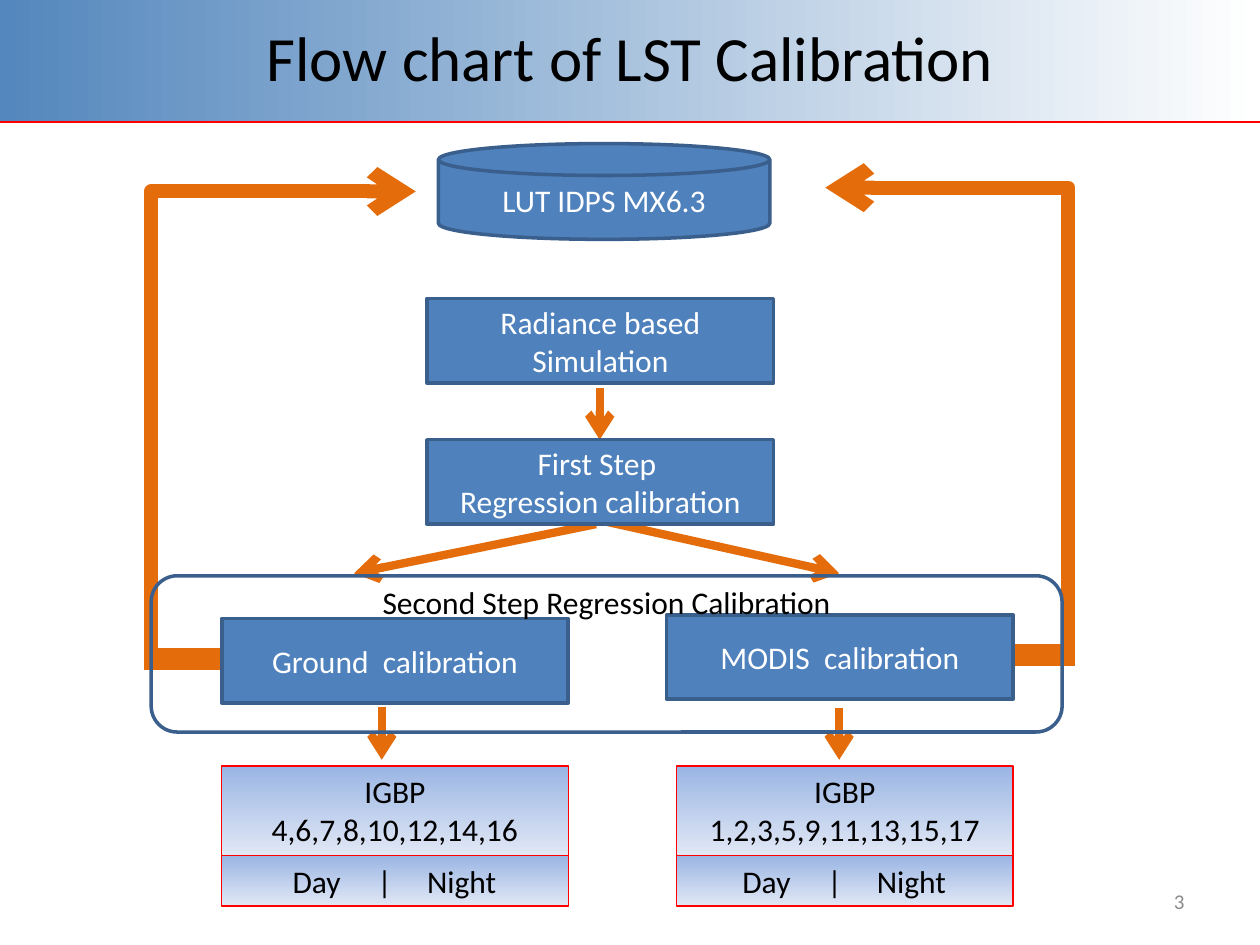
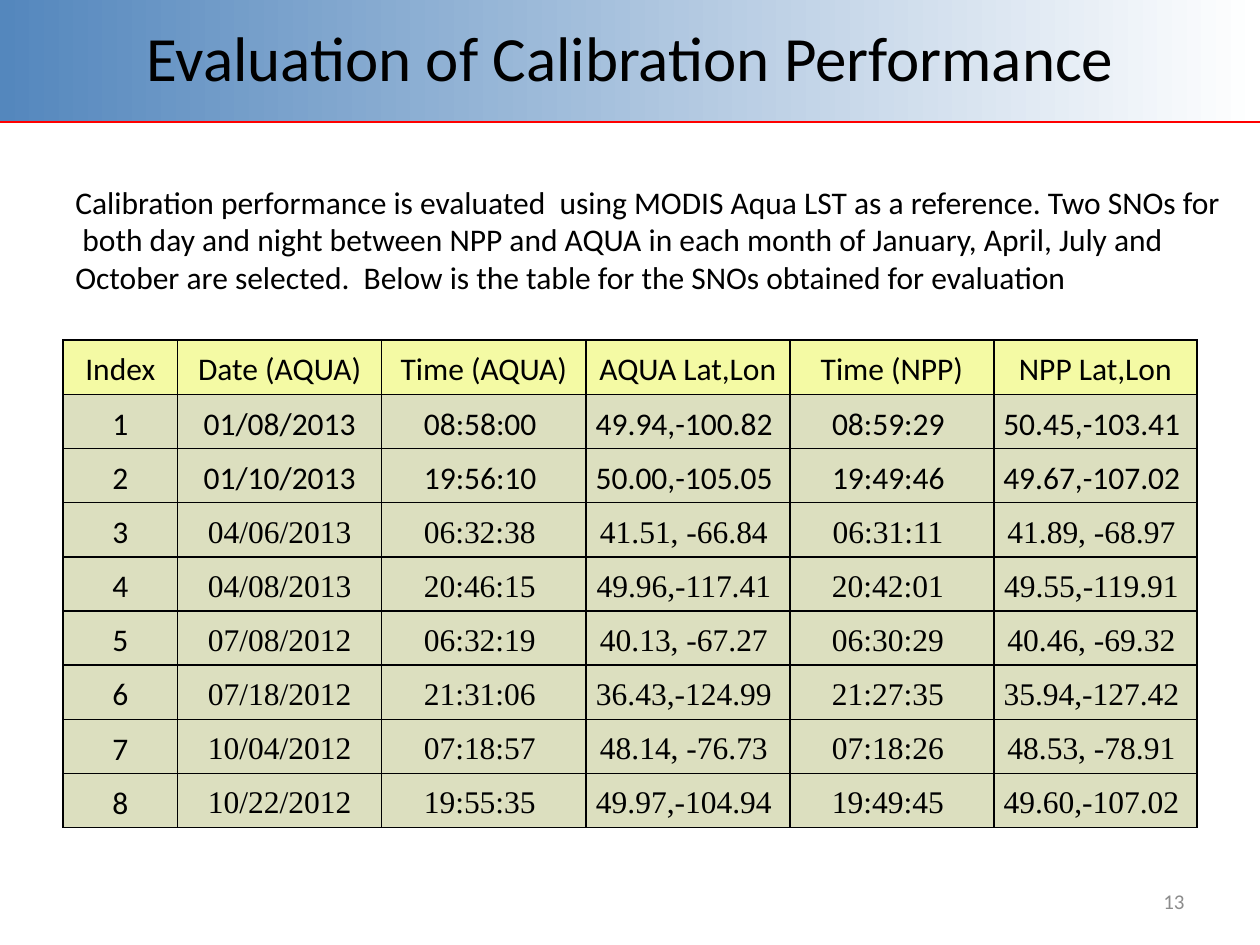
"""Build two slides: the LST calibration flow chart and its evaluation table."""
from lxml import etree
from pptx import Presentation, util as u
from pptx.dml.color import RGBColor
from pptx.enum import shapes, text
from pptx.oxml.ns import qn

HUES = {
    "band": "5487BD", "white": "FFFFFF", "red": "FF0000", "black": "000000",
    "box": "4F81BD", "edge": "3A5F8C", "flow": "E46C0A", "pale": "9AB5E4",
    "mist": "E1E8F5", "head": "F4FAA4", "cell": "DCDFBF", "grid": "000002",
    "gray": "8C8C8C",
}
SANS, SERIF = "Calibri", "Times New Roman"
KIND = shapes.MSO_SHAPE
LEFT, MID, RIGHT = text.PP_ALIGN.LEFT, text.PP_ALIGN.CENTER, text.PP_ALIGN.RIGHT
TOP, HALF = text.MSO_ANCHOR.TOP, text.MSO_ANCHOR.MIDDLE

PAGES = [("Flow chart of LST Calibration", "3"),
         ("Evaluation of Calibration Performance", "13")]

STEPS = [
    (3.39, 2.37, "Radiance based Simulation"),
    (3.39, 3.49, "First Step \nRegression calibration"),
    (1.76, 4.91, "Ground  calibration"),
    (5.29, 4.88, "MODIS  calibration"),
]
ARROWS = [
    (4.76, 3.08, 4.76, 3.49),
    (4.73, 4.16, 2.81, 4.55),
    (4.81, 4.14, 6.66, 4.55),
    (3.03, 5.61, 3.03, 6.03),
    (6.66, 5.62, 6.66, 6.03),
]
STUBS = [(1.2, 5.23, 1.76, 5.23), (8.04, 5.2, 8.42, 5.2)]
LOOPS = [
    ((1.2, 5.32, 3.3, 1.52), {"rot": "5400000", "flipH": "1", "flipV": "1"}),
    ((8.48, 5.29, 6.55, 1.49), {"rot": "16200000", "flipV": "1"}),
]
CLASSES = [(1.76, 2.75, "4,6,7,8,10,12,14,16"),
           (5.37, 2.67, "1,2,3,5,9,11,13,15,17")]
TIMES = "\tDay\t|\tNight"
TABS = (-0.62, -0.08, 0.53)

INTRO = ("Calibration performance is evaluated  using MODIS Aqua LST as a reference. "
         "Two SNOs for  both day and night between NPP and AQUA in each month of "
         "January, April, July and October are selected.  Below is the table for the "
         "SNOs obtained for evaluation")
HEADS = ["Index", "Date (AQUA)", "Time (AQUA)", "AQUA Lat,Lon", "Time (NPP)", "NPP Lat,Lon"]
SNOS = [
    ("01/08/2013", "08:58:00", "49.94,-100.82", "08:59:29", "50.45,-103.41"),
    ("01/10/2013", "19:56:10", "50.00,-105.05", "19:49:46", "49.67,-107.02"),
    ("04/06/2013", "06:32:38", "41.51, -66.84", "06:31:11", "41.89, -68.97"),
    ("04/08/2013", "20:46:15", "49.96,-117.41", "20:42:01", "49.55,-119.91"),
    ("07/08/2012", "06:32:19", "40.13, -67.27", "06:30:29", "40.46, -69.32"),
    ("07/18/2012", "21:31:06", "36.43,-124.99", "21:27:35", "35.94,-127.42"),
    ("10/04/2012", "07:18:57", "48.14, -76.73", "07:18:26", "48.53, -78.91"),
    ("10/22/2012", "19:55:35", "49.97,-104.94", "19:49:45", "49.60,-107.02"),
]
WIDTHS = [0.91, 1.62, 1.62, 1.62, 1.62, 1.61]
ROW = 0.43


def inch(*nums):
    return [u.Inches(n) for n in nums]


def hue(name):
    return RGBColor.from_string(HUES[name])


def assign(item, looks):
    for key, val in looks.items():
        setattr(item, key, val)


def write(frame, words, ink="black", size=18, face=SANS, align=MID, anchor=HALF, **para):
    assign(frame, {"text": words, "word_wrap": True, "vertical_anchor": anchor})
    for line in frame.paragraphs:
        assign(line, {"alignment": align, **para})
        assign(line.font, {"size": u.Pt(size), "name": face})
        line.font.color.rgb = hue(ink)


def blend(fill, hues, angle):
    fill.gradient()
    fill.gradient_angle = angle
    for stop, name in zip(fill.gradient_stops, hues):
        stop.color.rgb = hue(name)


def stroke(item, ink, width):
    item.line.color.rgb = hue(ink)
    item.line.width = u.Pt(width)


def draw(home, kind, at, ink=None, width=2, fill=None):
    item = home.add_shape(kind, *inch(*at))
    item.shadow.inherit = False
    if fill:
        item.fill.solid()
        item.fill.fore_color.rgb = hue(fill)
    else:
        item.fill.background()
    if ink:
        stroke(item, ink, width)
    else:
        item.line.fill.background()
    return item


def link(home, ends, width, ink="flow", tip=False):
    item = home.add_connector(shapes.MSO_CONNECTOR.STRAIGHT, *inch(*ends))
    stroke(item, ink, width)
    if tip:
        etree.SubElement(item.line._get_or_add_ln(), qn("a:tailEnd"), type="arrow")
    etree.SubElement(item.element.spPr, qn("a:effectLst"))
    return item


def loop(home, ends, turn):
    x1, y1, x2, y2 = ends
    midx, midy = (x1 + x2) / 2, (y1 + y2) / 2
    wide, high = abs(y2 - y1), abs(x2 - x1)
    box = (midx - wide / 2, midy - high / 2, midx + wide / 2, midy + high / 2)
    item = link(home, box, 8, tip=True)
    props = item.element.spPr
    props.find(qn("a:prstGeom")).set("prst", "bentConnector2")
    for key, val in turn.items():
        props.find(qn("a:xfrm")).set(key, val)


def start(deck, title, number):
    slide = deck.slides.add_slide(deck.slide_layouts[5])
    home = slide.shapes
    blend(draw(home, KIND.RECTANGLE, (0, -0.01, 10, 0.97)).fill, ("band", "white"), 0)
    link(home, (0, 0.97, 10, 0.97), 1.25, "red")
    head = home.title
    assign(head, dict(zip(("left", "top", "width", "height"), inch(0.5, 0, 9, 0.9))))
    write(head.text_frame, title, size=36)
    head.element.getparent().append(head.element)
    foot = home.add_textbox(*inch(7.17, 6.95, 2.33, 0.4))
    write(foot.text_frame, number, "gray", 12, align=RIGHT)
    return home


def classes(home, left, wide, codes):
    group = home.add_group_shape().shapes
    cards = []
    for top, high, words in ((6.08, 0.71, "IGBP\n" + codes), (6.79, 0.4, TIMES)):
        card = draw(group, KIND.RECTANGLE, (left, top, wide, high), "red", 0.75)
        blend(card.fill, ("pale", "mist"), 270)
        write(card.text_frame, words, anchor=TOP)
        cards.append(card)
    line = cards[-1].text_frame.paragraphs[0]
    line.alignment = LEFT
    stops = etree.SubElement(line._p.get_or_add_pPr(), qn("a:tabLst"))
    line._p.pPr.insert(0, stops)
    for shift in TABS:
        spot = u.Inches(wide / 2 + shift - 0.1)
        etree.SubElement(stops, qn("a:tab"), pos=str(spot), algn="ctr")


def chart(home):
    disk = draw(home, KIND.FLOWCHART_MAGNETIC_DISK, (3.48, 1.14, 2.63, 0.76), "edge", fill="box")
    write(disk.text_frame, "LUT IDPS MX6.3", "white")
    for ends, turn in LOOPS:
        loop(home, ends, turn)
    for ends in STUBS:
        link(home, ends, 12.5)
    for ends in ARROWS:
        link(home, ends, 4.75, tip=True)
    for left, top, words in STEPS:
        step = draw(home, KIND.FLOWCHART_PROCESS, (left, top, 2.75, 0.67), "edge", fill="box")
        write(step.text_frame, words, "white")
    for entry in CLASSES:
        classes(home, *entry)
    frame = draw(home, KIND.ROUNDED_RECTANGLE, (1.2, 4.57, 7.23, 1.24), "edge")
    frame.text_frame.margin_top = 0
    write(frame.text_frame, "Second Step Regression Calibration", anchor=TOP)


def border(cell):
    props = cell._tc.get_or_add_tcPr()
    for side in ("lnL", "lnR", "lnT", "lnB"):
        edge = etree.SubElement(props, qn("a:" + side), w=str(u.Pt(1)))
        solid = etree.SubElement(edge, qn("a:solidFill"))
        etree.SubElement(solid, qn("a:srgbClr"), val=HUES["grid"])


def report(home):
    intro = home.add_textbox(*inch(0.5, 1.4, 9.33, 1.01))
    write(intro.text_frame, INTRO, align=LEFT, anchor=TOP)
    rows = [HEADS] + [(str(n), sno[0], *(val + " " for val in sno[1:]))
                      for n, sno in enumerate(SNOS, 1)]
    size = inch(0.5, 2.7, sum(WIDTHS), ROW * len(rows))
    table = home.add_table(len(rows), len(HEADS), *size).table
    assign(table, {"first_row": False, "horz_banding": False})
    for col, wide in zip(table.columns, WIDTHS):
        col.width = u.Inches(wide)
    pads = dict.fromkeys(("margin_left", "margin_right", "margin_top", "margin_bottom"), 0)
    for r, row in enumerate(rows):
        for c, words in enumerate(row):
            cell = table.cell(r, c)
            assign(cell, {**pads, "vertical_anchor": HALF})
            border(cell)
            cell.fill.solid()
            cell.fill.fore_color.rgb = hue("cell" if r else "head")
            face = SERIF if r > 2 and c else SANS
            cell.text = words
            line = cell.text_frame.paragraphs[0]
            assign(line, {"alignment": MID, "line_spacing": 1.15})
            assign(line.font, {"size": u.Pt(18), "name": face})
            line.font.color.rgb = hue("black")


def main():
    deck = Presentation()
    assign(deck, {"slide_width": u.Inches(10), "slide_height": u.Inches(7.5)})
    for page, body in zip(PAGES, (chart, report)):
        body(start(deck, *page))
    deck.save("out.pptx")


if __name__ == "__main__":
    main()
